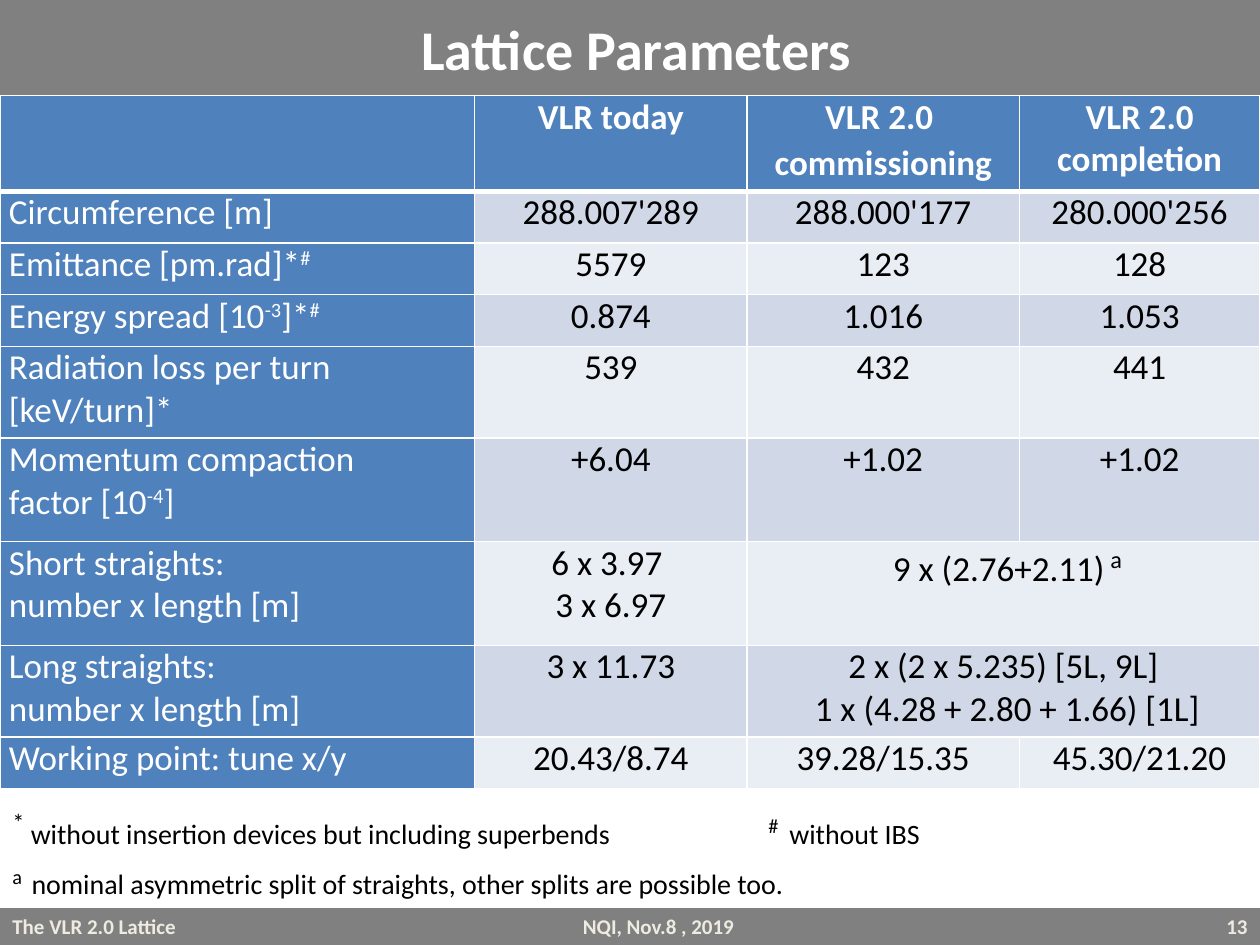
from typing import NamedTuple

from lxml import etree
from pptx import Presentation
from pptx.dml.color import RGBColor
from pptx.enum.shapes import MSO_SHAPE
from pptx.enum.text import MSO_ANCHOR, PP_ALIGN
from pptx.oxml.ns import qn
from pptx.util import Cm, Pt

LEFT, CENTER, RIGHT = PP_ALIGN.LEFT, PP_ALIGN.CENTER, PP_ALIGN.RIGHT
MIDDLE = MSO_ANCHOR.MIDDLE
RECTANGLE = MSO_SHAPE.RECTANGLE

FONT = "Calibri"
COLORS = {
    "bar": "808080",
    "footer": "EEECE1",
    "white": "FFFFFF",
    "black": "000000",
    "label": "4F81BD",
    "odd_row": "D0D8E8",
    "even_row": "E9EDF4",
}


class Bar(NamedTuple):
    left: float
    top: float
    width: float
    height: float
    text: str
    size: int
    color: str
    align: int
    tab: float | None = None


class Row(NamedTuple):
    """In cell texts ^..^ is raised, \\n starts a paragraph, \\v breaks a line."""
    height: float
    cells: tuple[str, ...]


class Piece(NamedTuple):
    text: str
    size: int
    raised: bool = False


BARS = [
    Bar(0, 18.31, 23.55, 0.74, "The VLR 2.0 Lattice\tNQI, Nov.8 , 2019", 12, "footer", LEFT, 11.5),
    Bar(22.91, 18.31, 2.49, 0.74, "13", 12, "footer", RIGHT),
    Bar(0, 0, 25.4, 1.93, " Lattice Parameters", 32, "white", CENTER),
]

COLUMN_WIDTHS = [9.57, 5.49, 5.49, 4.85]
ROWS = [
    Row(1.93, ("", "VLR today", "VLR 2.0 \ncommissioning", "VLR 2.0 completion")),
    Row(1.04, ("Circumference [m]", "288.007'289", "288.000'177", "280.000'256")),
    Row(1.04, ("Emittance [pm.rad]*^#^", "5579", "123", "128")),
    Row(1.04, ("Energy spread [10^-3^]*^#^", "0.874", "1.016", "1.053")),
    Row(1.85, ("Radiation loss per turn \v[keV/turn]*", "539", "432", "441")),
    Row(2.09, ("Momentum compaction\vfactor [10^-4^]", "+6.04", "+1.02", "+1.02")),
    Row(2.09, ("Short straights: \vnumber x length [m]", "6 x 3.97 \v3 x 6.97",
               " 9 x (2.76+2.11)^ a^")),
    Row(1.85, ("Long straights: \vnumber x length [m]", "3 x 11.73",
               "2 x (2 x 5.235) [5L, 9L]\v 1 x (4.28 + 2.80 + 1.66) [1L]")),
    Row(1.04, ("Working point: tune x/y", "20.43/8.74", "39.28/15.35", "45.30/21.20")),
]

FOOTNOTES = [
    [Piece("*", 24, True),
     Piece(" without insertion devices but including superbends\t", 16),
     Piece("# ", 20, True), Piece(" without IBS", 16)],
    [Piece("a", 20, True), Piece(" ", 24),
     Piece("nominal asymmetric split of straights, other splits are possible too.", 16)],
]


def rgb(name: str) -> RGBColor:
    return RGBColor.from_string(COLORS[name])


def style_run(run, size: int, color: str, bold: bool = False, raised: bool = False) -> None:
    run.font.name = FONT
    run.font.size = Pt(size)
    run.font.bold = bold
    run.font.color.rgb = rgb(color)
    if raised:
        run.font._element.set("baseline", "30000")


def add_tab_stop(paragraph, position: float) -> None:
    stops = etree.SubElement(paragraph._p.get_or_add_pPr(), qn("a:tabLst"))
    etree.SubElement(stops, qn("a:tab"), pos=str(Cm(position)), algn="l")


def add_bar(slide, bar: Bar) -> None:
    shape = slide.shapes.add_shape(
        RECTANGLE, Cm(bar.left), Cm(bar.top), Cm(bar.width), Cm(bar.height))
    shape.shadow.inherit = False
    shape.fill.solid()
    shape.fill.fore_color.rgb = rgb("bar")
    shape.line.fill.background()
    frame = shape.text_frame
    frame.vertical_anchor = MIDDLE
    frame.text = bar.text
    paragraph = frame.paragraphs[0]
    paragraph.alignment = bar.align
    if bar.tab is not None:
        add_tab_stop(paragraph, bar.tab)
    for run in paragraph.runs:
        style_run(run, bar.size, bar.color, bold=True)


def set_borders(cell, top: int, bottom: int) -> None:
    properties = cell._tc.get_or_add_tcPr()
    for tag, width in (("a:lnL", 1), ("a:lnR", 1), ("a:lnT", top), ("a:lnB", bottom)):
        line = etree.SubElement(properties, qn(tag), w=str(Pt(width)))
        fill = etree.SubElement(line, qn("a:solidFill"))
        etree.SubElement(fill, qn("a:srgbClr"), val=COLORS["white"])


def write_cell(cell, text: str, align: int, color: str, bold: bool) -> None:
    frame = cell.text_frame
    for index, content in enumerate(text.split("\n")):
        paragraph = frame.add_paragraph() if index else frame.paragraphs[0]
        paragraph.alignment = align
        paragraph.space_before = paragraph.space_after = Pt(1)
        for part, section in enumerate(content.split("^")):
            raised = part % 2 == 1
            size = 24 if section == " a" else 20
            for line_number, line in enumerate(section.split("\v")):
                if line_number:
                    paragraph.add_line_break()
                if line:
                    run = paragraph.add_run()
                    run.text = line
                    style_run(run, size, color, bold, raised)


def add_parameter_table(slide) -> None:
    table = slide.shapes.add_table(
        len(ROWS), len(COLUMN_WIDTHS), Cm(0), Cm(1.93),
        Cm(sum(COLUMN_WIDTHS)), Cm(sum(row.height for row in ROWS))).table
    for column, width in zip(table.columns, COLUMN_WIDTHS):
        column.width = Cm(width)
    for r, row in enumerate(ROWS):
        table.rows[r].height = Cm(row.height)
        is_header = r == 0
        for c in range(len(COLUMN_WIDTHS)):
            cell = table.cell(r, c)
            on_blue = is_header or c == 0
            cell.margin_left = cell.margin_right = Cm(0.18)
            cell.margin_top = cell.margin_bottom = 0
            set_borders(cell, top=3 if r == 1 else 1, bottom=3 if is_header else 1)
            cell.fill.solid()
            band = "odd_row" if r % 2 else "even_row"
            cell.fill.fore_color.rgb = rgb("label" if on_blue else band)
            if c < len(row.cells):
                write_cell(cell, row.cells[c], CENTER if c else LEFT,
                           "white" if on_blue else "black", is_header)
        if len(row.cells) < len(COLUMN_WIDTHS):
            table.cell(r, len(row.cells) - 1).merge(table.cell(r, len(COLUMN_WIDTHS) - 1))


def add_footnotes(slide) -> None:
    frame = slide.shapes.add_textbox(Cm(0), Cm(16.21), Cm(19.2), Cm(1.96)).text_frame
    frame.word_wrap = True
    frame.vertical_anchor = MIDDLE
    for index, pieces in enumerate(FOOTNOTES):
        paragraph = frame.add_paragraph() if index else frame.paragraphs[0]
        add_tab_stop(paragraph, 15.24)
        for piece in pieces:
            run = paragraph.add_run()
            run.text = piece.text
            style_run(run, piece.size, "black", raised=piece.raised)


def main() -> None:
    presentation = Presentation()
    presentation.slide_width = Cm(25.4)
    presentation.slide_height = Cm(19.05)
    slide = presentation.slides.add_slide(presentation.slide_layouts[6])
    for bar in BARS:
        add_bar(slide, bar)
    add_parameter_table(slide)
    add_footnotes(slide)
    presentation.save("out.pptx")


if __name__ == "__main__":
    main()
